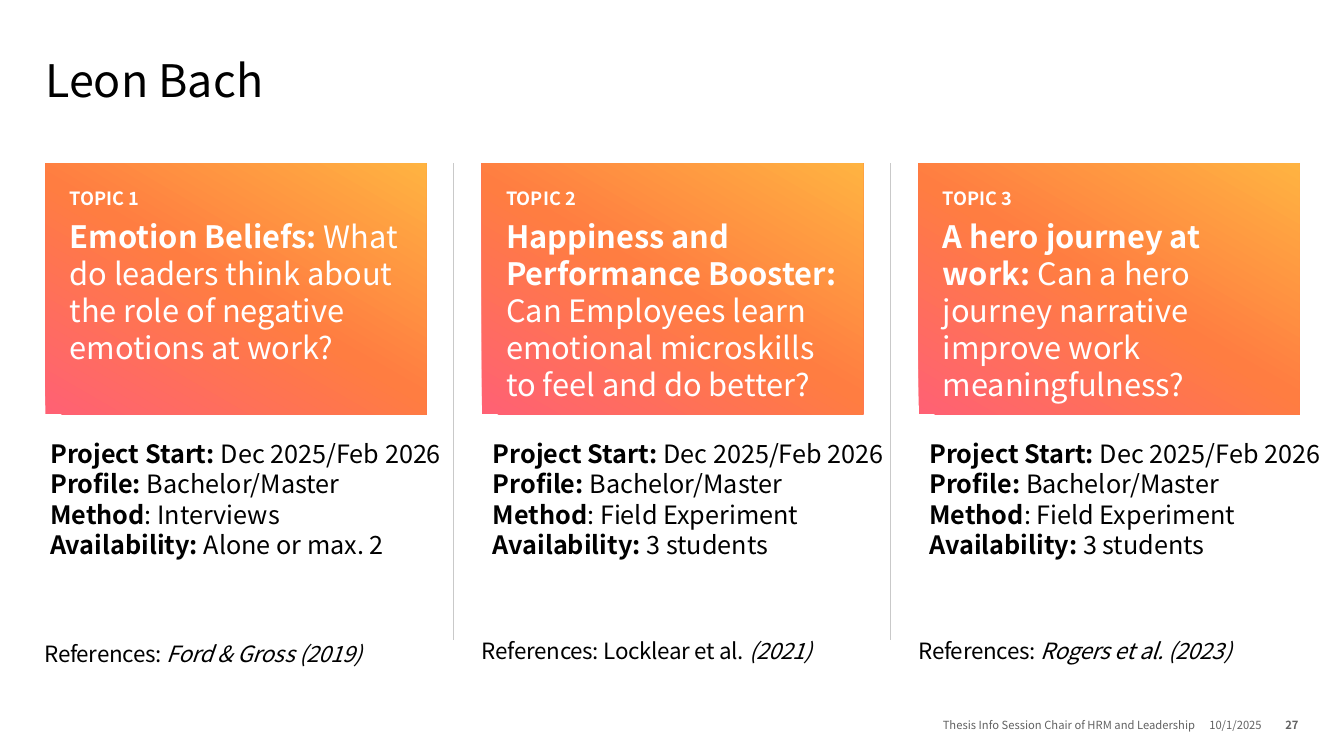
from dataclasses import dataclass

from lxml import etree
from pptx import Presentation
from pptx.dml.color import RGBColor
from pptx.enum import shapes, text
from pptx.oxml import ns, parse_xml
from pptx.util import Inches, Pt


@dataclass(frozen=True)
class Theme:
    font: str = "Noto Sans CJK KR"
    ink: str = "000000"
    white: str = "FFFFFF"
    gray: str = "626262"
    rule: str = "C9C9C9"
    grad: tuple = ((0, "FF6174"), (50, "FF7D41"), (100, "FFB341"))
    title: int = 32
    head: int = 22
    body: int = 18
    ref: int = 16
    label: int = 13
    foot: int = 8


theme = Theme()
LEFT, TOP = text.PP_ALIGN.LEFT, text.MSO_ANCHOR.TOP


def write(frame, paras, color=theme.ink, inset=0.0, after=0, align=LEFT, anchor=TOP):
    """Fill a frame; each paragraph is (size, [(words, style), ...])."""
    frame.word_wrap = True
    frame.auto_size = text.MSO_AUTO_SIZE.NONE
    frame.vertical_anchor = anchor
    frame.margin_left = frame.margin_right = Inches(inset)
    frame.margin_top = frame.margin_bottom = Inches(min(inset, 0.05) if inset < 0.2 else inset)
    for n, (size, parts) in enumerate(paras):
        para = frame.paragraphs[0] if n == 0 else frame.add_paragraph()
        para.alignment = align
        para.space_before, para.space_after = Pt(0), Pt(after)
        para.line_spacing = Pt(round(size * 1.2, 1))
        for words, style in parts:
            run = para.add_run()
            run.text = words
            run.font.name, run.font.size = theme.font, Pt(size)
            run.font.bold, run.font.italic = "b" in style, "i" in style
            run.font.color.rgb = RGBColor.from_string(color)


def add_box(x, y, w, h):
    return slide.shapes.add_textbox(Inches(x), Inches(y), Inches(w), Inches(h))


deck = Presentation()
deck.slide_width, deck.slide_height = Inches(13.33), Inches(7.5)
slide = deck.slides.add_slide(deck.slide_layouts[1])

# Title
title = slide.shapes.title
title.left, title.top = Inches(0.45), Inches(0.52)
title.width, title.height = Inches(12.44), Inches(0.63)
write(title.text_frame, [(theme.title, [("Leon Bach", "")])])

# Topics: heading, question, method, availability, reference parts
topics = [
    ("Emotion Beliefs: ",
     "What do leaders think about the role of negative emotions at work?",
     "Interviews", "Alone or max. 2", "", "Ford & Gross (2019)"),
    ("Happiness and Performance Booster: ",
     "Can Employees learn emotional microskills to feel and do better?",
     "Field Experiment", "3 students", "Locklear et al. ", "(2021)"),
    ("A hero journey at work: ",
     "Can a hero journey narrative improve work meaningfulness?",
     "Field Experiment", "3 students", "", "Rogers et al. (2023)"),
]
stops = "".join(f'<a:gs pos="{pos * 1000}"><a:srgbClr val="{rgb}"/></a:gs>'
                for pos, rgb in theme.grad)
grad = (f'<a:gradFill {ns.nsdecls("a")} rotWithShape="1"><a:gsLst>{stops}</a:gsLst>'
        f'<a:lin ang="{300 * 60000}" scaled="0"/></a:gradFill>')

for n, (head, ask, method, seats, plain, slant) in enumerate(topics):
    x = 0.45 + 4.33 * n

    # Gradient card
    card = slide.shapes.add_shape(shapes.MSO_SHAPE.RECTANGLE, Inches(x), Inches(1.62),
                                  Inches(3.78), Inches(2.49))
    card.shadow.inherit = False
    card.line.fill.background()
    card._element.spPr.find(ns.qn("a:prstGeom")).addnext(parse_xml(grad))
    write(card.text_frame,
          [(theme.label, [(f"TOPIC {n + 1}", "b")]),
           (theme.head, [(head, "b"), (ask, "")])],
          color=theme.white, inset=0.24, after=6)

    # Project facts
    facts = add_box(0.4 if n == 0 else x + 0.01, 4.3, 4.11, 1.31)
    rows = [("Project Start: ", "Dec 2025/Feb 2026"), ("Profile: ", "Bachelor/Master"),
            ("Method", f": {method}"), ("Availability: ", seats)]
    write(facts.text_frame,
          [(theme.body, [(name, "b"), (value, "")]) for name, value in rows], inset=0.1)

    # Reference: the first one sits in the body placeholder
    if n == 0:
        ref = slide.placeholders[1]
        ref.left, ref.top = Inches(0.44), Inches(6.35)
        ref.width, ref.height = Inches(3.78), Inches(0.27)
        props = ref.text_frame.paragraphs[0]._p.get_or_add_pPr()
        props.set("marL", "0")
        props.set("indent", "0")
        etree.SubElement(props, ns.qn("a:buNone"))
    else:
        ref = add_box(x, 6.32, 3.78, 0.27)
    write(ref.text_frame,
          [(theme.ref, [(f"References: {plain}", ""), (slant, "i")])], after=8)
    for run in ref.text_frame.paragraphs[0].runs:
        run._r.get_or_add_rPr().set("spc", "-20")

# Dividers between the columns
for x in (4.5, 8.83):
    rule = slide.shapes.add_connector(shapes.MSO_CONNECTOR.STRAIGHT, Inches(x), Inches(1.62),
                                      Inches(x), Inches(6.35))
    rule.line.color.rgb = RGBColor.from_string(theme.rule)
    rule.line.width = Pt(0.5)
    etree.SubElement(rule._element.spPr, ns.qn("a:effectLst"))

# Footer
RIGHT, MID = text.PP_ALIGN.RIGHT, text.PP_ALIGN.CENTER
for x, w, words, style, align in [
    (7.53, 4.33, "Thesis Info Session Chair of HRM and Leadership", "", RIGHT),
    (11.94, 0.63, "10/1/2025", "", MID),
    (12.57, 0.31, "27", "b", RIGHT),
]:
    write(add_box(x, 7.06, w, 0.2).text_frame, [(theme.foot, [(words, style)])],
          color=theme.gray, align=align, anchor=text.MSO_ANCHOR.BOTTOM)

deck.save("out.pptx")
